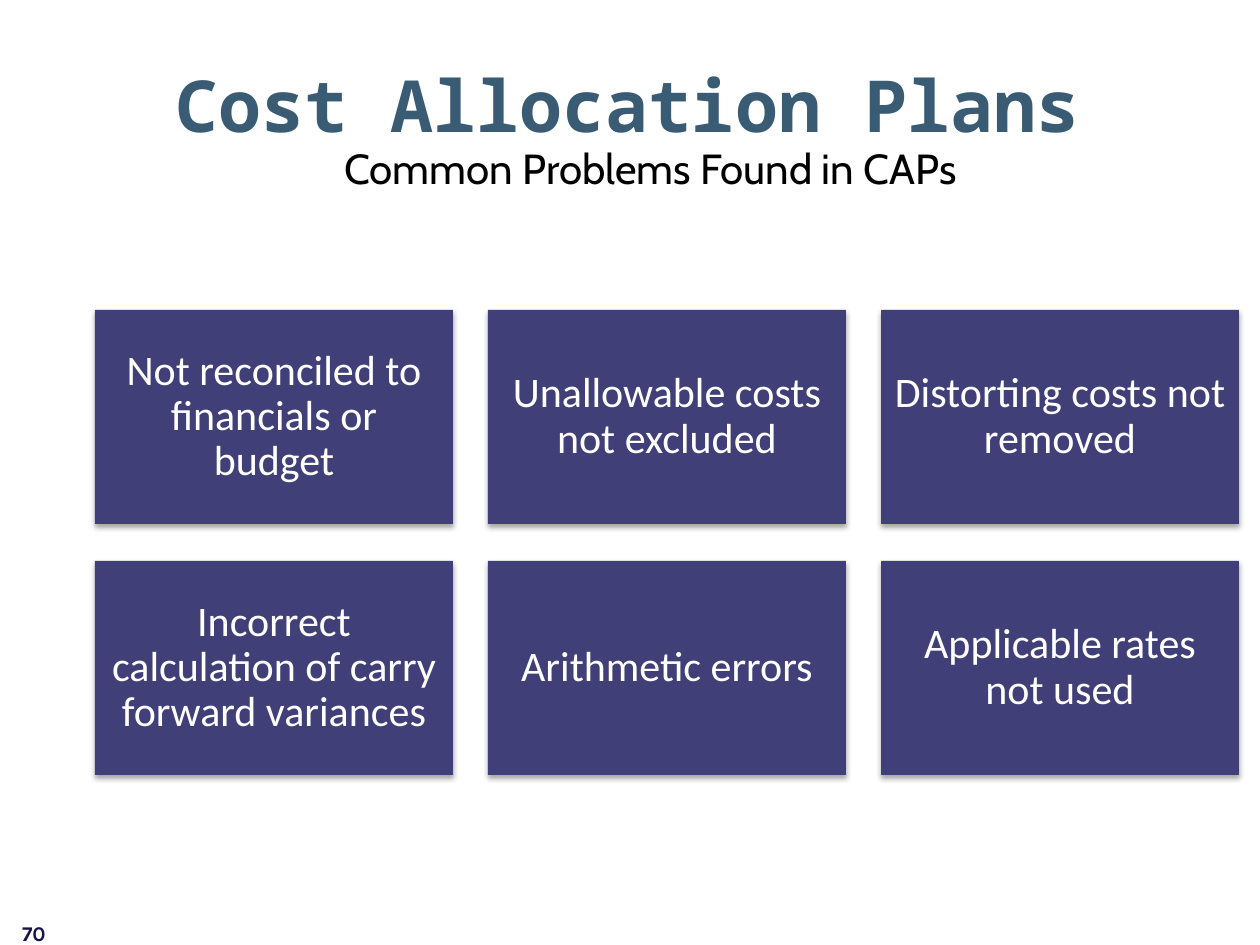
"""Build the slide on common problems found in cost allocation plans."""
from dataclasses import dataclass

from lxml import etree
from pptx import Presentation
from pptx.dml.color import RGBColor
from pptx.enum.shapes import MSO_SHAPE
from pptx.enum.text import MSO_ANCHOR, PP_ALIGN
from pptx.oxml.ns import qn
from pptx.util import Emu, Pt

RECTANGLE = MSO_SHAPE.RECTANGLE
TOP, MIDDLE = MSO_ANCHOR.TOP, MSO_ANCHOR.MIDDLE
LEFT, CENTER = PP_ALIGN.LEFT, PP_ALIGN.CENTER
EMU_PER_INCH = 914400
PX_PER_INCH = 126

PROBLEMS = [
    "Not reconciled to financials or budget",
    "Unallowable costs not excluded",
    "Distorting costs not removed",
    "Incorrect calculation of carry forward variances",
    "Arithmetic errors",
    "Applicable rates not used",
]
COLUMNS = 3
GRID_LEFT, GRID_TOP = 95, 310
CARD_WIDTH, CARD_HEIGHT = 358, 214
COLUMN_STEP, ROW_STEP = 393, 251


@dataclass(frozen=True)
class Theme:
    """Hold the colours, fonts and type sizes of the slide."""
    title_color: str = "395B74"
    text_color: str = "000000"
    card_color: str = "413F77"
    card_text_color: str = "FFFFFF"
    number_color: str = "17144D"
    shadow_color: str = "000000"
    title_font: str = "Noto Sans Mono"
    subtitle_font: str = "Cabin"
    card_font: str = "Calibri"
    number_font: str = "Karla"
    title_size: int = 41
    body_size: int = 24
    number_size: int = 12


THEME = Theme()


def px(length):
    """Turn whole pixels into EMU."""
    return Emu(round(length * EMU_PER_INCH / PX_PER_INCH))


def write_text(shape, text, *, font, size, color, bold=False, align=CENTER,
               anchor=TOP, inset_x=12, inset_y=6, line_spacing=1.0):
    """Write one formatted paragraph into a shape."""
    frame = shape.text_frame
    frame.word_wrap = True
    frame.vertical_anchor = anchor
    frame.margin_left = frame.margin_right = px(inset_x)
    frame.margin_top = frame.margin_bottom = px(inset_y)
    para = frame.paragraphs[0]
    para.alignment = align
    para.line_spacing = line_spacing
    span = para.add_run()
    span.text = text
    span.font.name = font
    span.font.size = Pt(size)
    span.font.bold = bold
    span.font.color.rgb = RGBColor.from_string(color)


def add_label(page, text, left, top, width, height, **text_format):
    """Add a text box with one formatted paragraph."""
    box = page.shapes.add_textbox(px(left), px(top), px(width), px(height))
    write_text(box, text, **text_format)


def add_shadow(shape):
    """Give a shape a soft shadow straight below it."""
    shape.shadow.inherit = False
    effects = shape._element.spPr.find(qn("a:effectLst"))
    shadow = etree.SubElement(effects, qn("a:outerShdw"), blurRad=str(Pt(3.1)),
                              dist=str(Pt(1.8)), dir="5400000", rotWithShape="0")
    color = etree.SubElement(shadow, qn("a:srgbClr"), val=THEME.shadow_color)
    etree.SubElement(color, qn("a:alpha"), val="35000")


def add_card(page, text, left, top):
    """Add one filled card that names a problem."""
    card = page.shapes.add_shape(RECTANGLE, px(left), px(top),
                                 px(CARD_WIDTH), px(CARD_HEIGHT))
    card.fill.solid()
    card.fill.fore_color.rgb = RGBColor.from_string(THEME.card_color)
    card.line.fill.background()
    add_shadow(card)
    write_text(card, text, font=THEME.card_font, size=THEME.body_size,
               color=THEME.card_text_color, anchor=MIDDLE, inset_y=12,
               line_spacing=0.9)


def add_problem_grid(page):
    """Lay out the problem cards in rows and columns."""
    for index, problem in enumerate(PROBLEMS):
        row, column = divmod(index, COLUMNS)
        add_card(page, problem, GRID_LEFT + column * COLUMN_STEP,
                 GRID_TOP + row * ROW_STEP)


def main():
    """Build and save the deck."""
    deck = Presentation()
    deck.slide_width, deck.slide_height = px(1260), px(945)
    page = deck.slides.add_slide(deck.slide_layouts[6])
    add_problem_grid(page)
    add_label(page, "Common Problems Found in CAPs", 94, 137, 1113, 63,
              font=THEME.subtitle_font, size=THEME.body_size,
              color=THEME.text_color)
    add_label(page, "Cost Allocation Plans", 61, 61, 1134, 135,
              font=THEME.title_font, size=THEME.title_size,
              color=THEME.title_color, bold=True, inset_y=0)
    add_label(page, "70", 10, 915, 294, 30, font=THEME.number_font,
              size=THEME.number_size, color=THEME.number_color, bold=True,
              align=LEFT)
    deck.save("out.pptx")


if __name__ == "__main__":
    main()
